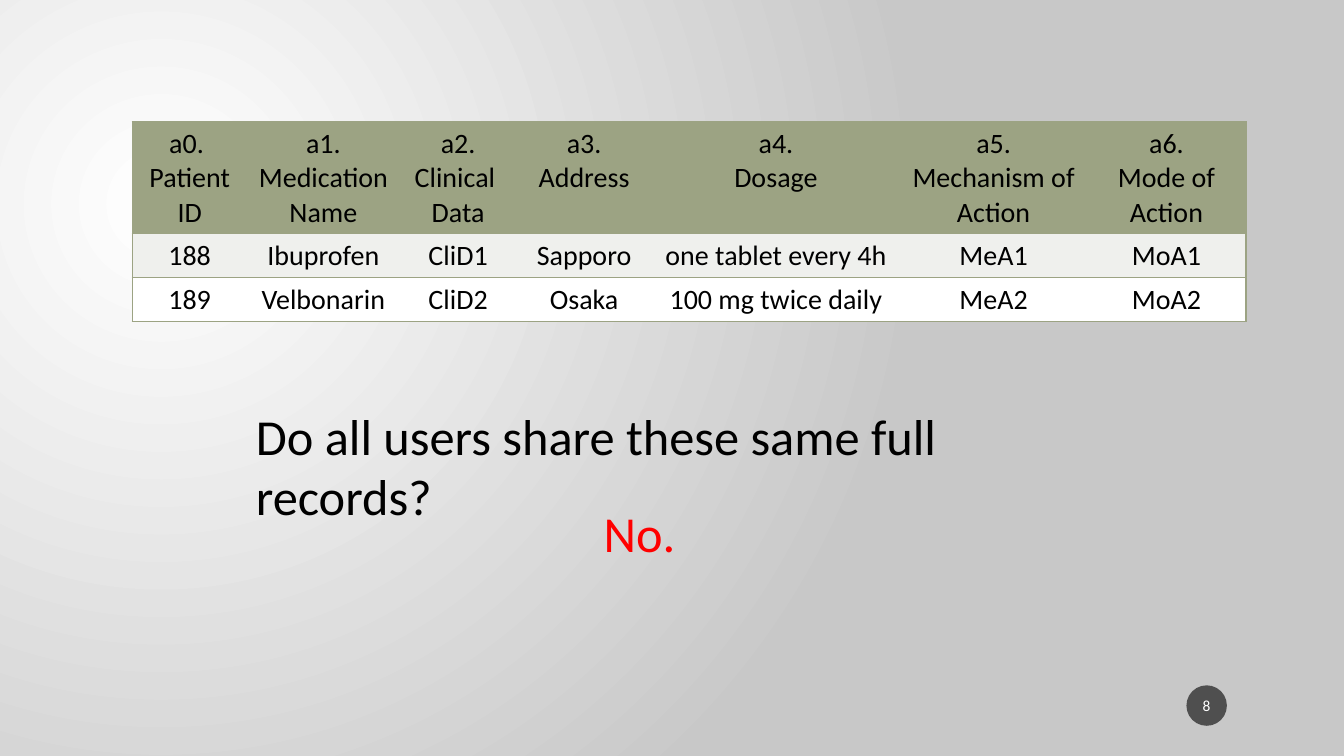
from lxml.etree import SubElement
from pptx import Presentation
from pptx.dml.color import RGBColor as RGB
from pptx.enum.shapes import MSO_SHAPE as SHAPE
from pptx.enum.text import MSO_ANCHOR as ANCHOR, PP_ALIGN as ALIGN
from pptx.oxml.ns import qn
from pptx.util import Cm, Pt

HUES = {
    "black": "000000",
    "white": "FFFFFF",
    "red": "FF0000",
    "gray": "C8C8C8",
    "dark": "1D1D1D",
    "sage": "9CA383",
    "pale": "EFF0ED",
}
FONT = "Calibri"
NO_GRID = "{2D5ABB26-0587-4C30-8999-92F81FD0307C}"
ROWS = [
    ["a0. \vPatient ID", "a1.\nMedication Name", "a2.\nClinical \nData",
     "a3.\nAddress", "a4.\nDosage", "a5.\nMechanism of Action",
     "a6.\nMode of Action"],
    ["188", "Ibuprofen", "CliD1", "Sapporo", "one tablet every 4h",
     "MeA1", "MoA1"],
    ["189", "Velbonarin", "CliD2", "Osaka", "100 mg twice daily",
     "MeA2", "MoA2"],
]
WIDTHS = [2.9, 3.84, 2.95, 3.4, 6.27, 4.7, 4.01]
HEIGHTS = [2.82, 1.09, 1.09]
FILLS = ["sage", "pale", "white"]


def hue(name):
    return RGB.from_string(HUES[name])


def style(frame, size, color, align=ALIGN.LEFT):
    for para in frame.paragraphs:
        para.alignment = align
        for run in para.runs:
            run.font.size = Pt(size)
            run.font.name = FONT
            run.font.color.rgb = hue(color)


def paint_back(slide):
    fill = slide.background.fill
    fill.gradient()
    for stop, name in zip(fill.gradient_stops, ["white", "gray"]):
        stop.color.rgb = hue(name)
    grad = slide.element.find(".//" + qn("a:gradFill"))
    grad.remove(grad.find(qn("a:lin")))
    ring = SubElement(grad, qn("a:path"), path="circle")
    SubElement(ring, qn("a:fillToRect"),
               l="50000", t="55000", r="125000", b="100000")


def add_badge(slide, text, left, top, size):
    disc = slide.shapes.add_shape(
        SHAPE.OVAL, Cm(left), Cm(top), Cm(size), Cm(size))
    disc.shadow.inherit = False
    disc.line.fill.background()
    disc.fill.solid()
    disc.fill.fore_color.rgb = hue("dark")
    tint = disc.element.spPr.find(".//" + qn("a:srgbClr"))
    SubElement(tint, qn("a:alpha"), val="70000")
    frame = disc.text_frame
    frame.text = text
    frame.margin_left = frame.margin_right = Cm(0.05)
    frame.vertical_anchor = ANCHOR.MIDDLE
    style(frame, 11, "white", ALIGN.CENTER)


def add_text(slide, text, left, top, width, color):
    box = slide.shapes.add_textbox(Cm(left), Cm(top), Cm(width), Cm(1.8))
    frame = box.text_frame
    frame.word_wrap = True
    frame.text = text
    style(frame, 36, color)


def add_edges(cell, sides):
    props = cell._tc.get_or_add_tcPr()
    for spot, side in enumerate(sides):
        line = SubElement(props, qn("a:ln" + side), w=str(Pt(1)))
        fill = SubElement(line, qn("a:solidFill"))
        SubElement(fill, qn("a:srgbClr"), val=HUES["sage"])
        props.insert(spot, line)


def add_grid(slide, left, top):
    frame = slide.shapes.add_table(
        len(ROWS), len(WIDTHS), Cm(left), Cm(top),
        Cm(sum(WIDTHS)), Cm(sum(HEIGHTS)))
    table = frame.table
    table.first_row = table.horz_banding = False
    frame._element.find(".//" + qn("a:tableStyleId")).text = NO_GRID
    for col, width in zip(table.columns, WIDTHS):
        col.width = Cm(width)
    last = len(WIDTHS) - 1
    for row, height, words, fill in zip(table.rows, HEIGHTS, ROWS, FILLS):
        row.height = Cm(height)
        for num, (cell, word) in enumerate(zip(row.cells, words)):
            cell.text_frame.text = word
            style(cell.text_frame, 20, "black", ALIGN.CENTER)
            cell.fill.solid()
            cell.fill.fore_color.rgb = hue(fill)
            sides = {0: "LTB", last: "RTB"}.get(num, "TB")
            add_edges(cell, sides)


def main():
    deck = Presentation()
    deck.slide_width, deck.slide_height = Cm(33.87), Cm(19.05)
    slide = deck.slides.add_slide(deck.slide_layouts[6])
    paint_back(slide)
    add_badge(slide, "8", 29.9, 17.27, 1.02)
    add_text(slide, "Do all users share these same full records?",
             6.2, 10.08, 22.3, "black")
    add_text(slide, "No.", 14.96, 12.52, 2.74, "red")
    add_grid(slide, 3.33, 3.07)
    deck.save("out.pptx")


if __name__ == "__main__":
    main()
